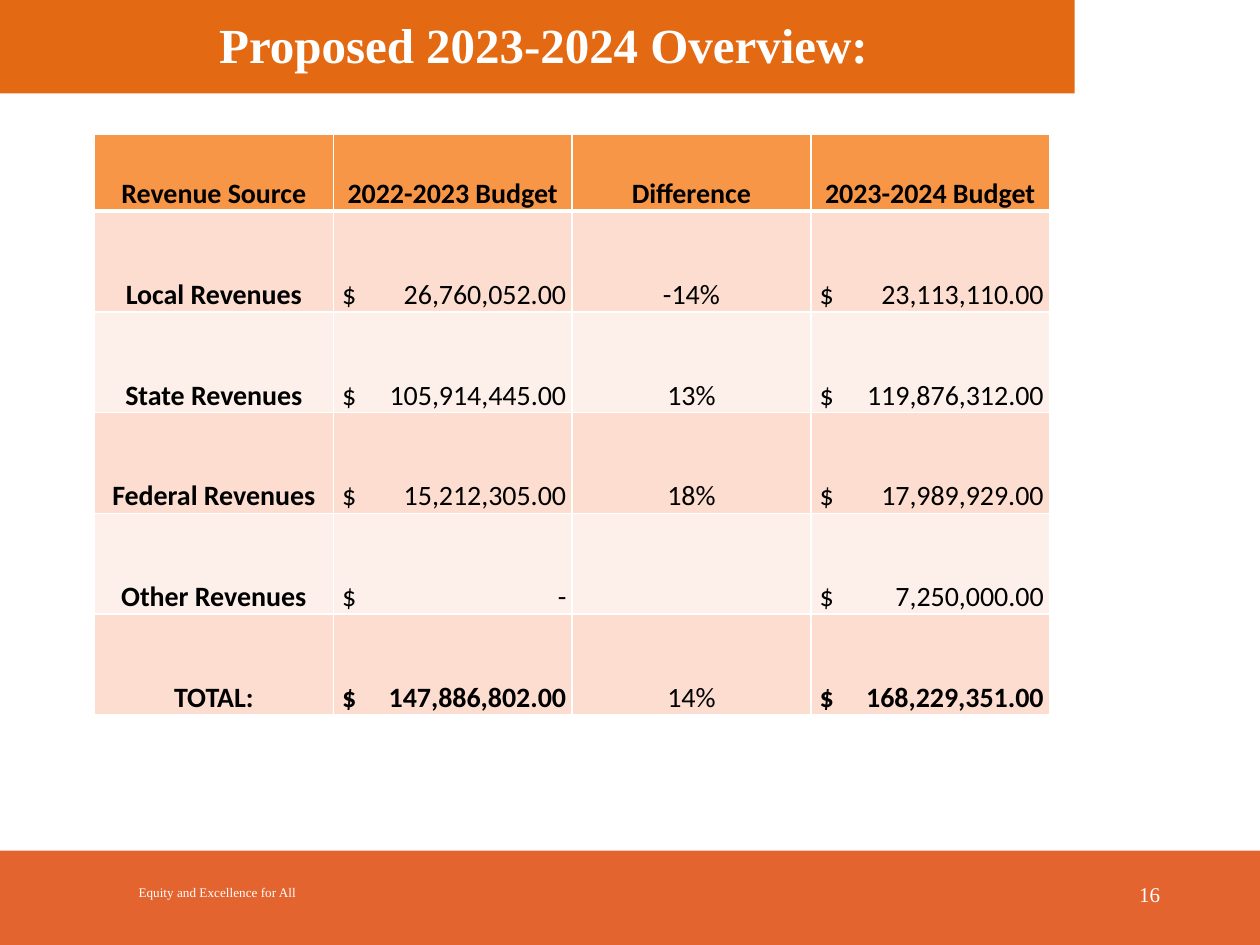
"""Build the revenue overview slide of the proposed budget."""
import dataclasses
import typing

import pptx
import pptx.dml.color
import pptx.enum.shapes
import pptx.enum.text
import pptx.oxml.ns
import pptx.util
from lxml import etree

WIDE, HIGH = 10, 7.5
HUES = {"head": "F79646", "odd": "FCDDCF", "even": "FDEFE9", "top": "E46913",
        "foot": "E4642F", "white": "FFFFFF", "black": "000000"}
SERIF, SANS = "Times New Roman", "Calibri"
COLS, PAD, STOP = 4, 0.07, 1.78


@dataclasses.dataclass
class Box:
    """A place on the slide, as shares of its width and height."""
    left: float
    top: float
    width: float
    height: float

    def place(self) -> tuple:
        """Return the place as lengths."""
        return tuple(pptx.util.Inches(share * side) for share, side in
                     zip((self.left, self.top, self.width, self.height), (WIDE, HIGH) * 2))


@dataclasses.dataclass
class Bar:
    """A coloured band."""
    box: Box
    hue: str


@dataclasses.dataclass
class Label:
    """A line of white text."""
    box: Box
    text: str
    size: float
    bold: bool = False
    inset: tuple = (0.01, 0)
    pitch: typing.Optional[float] = None


@dataclasses.dataclass
class Line:
    """A row of the revenue table."""
    name: str
    old: str
    change: str
    new: str
    total: bool = False


BARS = [Bar(Box(0, 0.9, 1, 0.1), "foot"), Bar(Box(0, 0, 0.853, 0.099), "top")]
LABELS = [
    Label(Box(0.173, 0.013, 0.583, 0.064), "Proposed 2023-2024 Overview:", 28, True, (0.01, 0.02)),
    Label(Box(0.9, 0.933, 0.025, 0.035), "16", 12, inset=(0.04, 0), pitch=14.1),
    Label(Box(0.109, 0.936, 0.14, 0.019), "Equity and Excellence for All", 7.5),
]
HEADS = ["Revenue Source", "2022-2023 Budget", "Difference", "2023-2024 Budget"]
LINES = [
    Line("Local Revenues", "26,760,052.00", "-14%", "23,113,110.00"),
    Line("State Revenues", "105,914,445.00", "13%", "119,876,312.00"),
    Line("Federal Revenues", "15,212,305.00", "18%", "17,989,929.00"),
    Line("Other Revenues", "-", "", "7,250,000.00"),
    Line("TOTAL:", "147,886,802.00", "14%", "168,229,351.00", True),
]
GRID = Box(0.075, 0.142, 0.758, 0.614)
HEAD, BODY = 0.61, 0.8


def shade(name: str) -> pptx.dml.color.RGBColor:
    """Look up a colour."""
    return pptx.dml.color.RGBColor.from_string(HUES[name])


def style(font, face: str, size: float, hue: str, bold: bool) -> None:
    """Set the look of a font."""
    font.name, font.size, font.bold = face, pptx.util.Pt(size), bold
    font.color.rgb = shade(hue)


def draw_bar(slide, bar: Bar) -> None:
    """Draw a band."""
    shape = slide.shapes.add_shape(pptx.enum.shapes.MSO_SHAPE.RECTANGLE, *bar.box.place())
    shape.shadow.inherit = False
    shape.fill.solid()
    shape.fill.fore_color.rgb = shade(bar.hue)
    shape.line.fill.background()


def draw_label(slide, label: Label) -> None:
    """Draw a line of text."""
    frame = slide.shapes.add_textbox(*label.box.place()).text_frame
    frame.word_wrap = True
    frame.margin_left, frame.margin_top = map(pptx.util.Inches, label.inset)
    frame.margin_right = frame.margin_bottom = 0
    para = frame.paragraphs[0]
    para.text = label.text
    if label.pitch:
        para.line_spacing = pptx.util.Pt(label.pitch)
    style(para.font, SERIF, label.size, "white", label.bold)


def add_node(root, tag: str, **attrs: str):
    """Add an XML child."""
    return etree.SubElement(root, pptx.oxml.ns.qn(tag), **attrs)


def edge(cell, low: float) -> None:
    """Give a cell white borders, ahead of its fill."""
    props = cell._tc.get_or_add_tcPr()
    for side, width in zip("LRTB", (1, 1, 1, low)):
        line = add_node(props, f"a:ln{side}", w=str(pptx.util.Pt(width)))
        add_node(add_node(line, "a:solidFill"), "a:srgbClr", val=HUES["white"])


def fill_cell(cell, text: str, hue: str, bold: bool, money: bool, low: float = 1) -> None:
    """Write and colour a cell."""
    edge(cell, low)
    cell.fill.solid()
    cell.fill.fore_color.rgb = shade(hue)
    cell.vertical_anchor = pptx.enum.text.MSO_ANCHOR.BOTTOM
    cell.margin_left = pptx.util.Inches(PAD if money else 0)
    cell.margin_right = cell.margin_top = cell.margin_bottom = 0
    para = cell.text_frame.paragraphs[0]
    align = pptx.enum.text.PP_ALIGN
    para.alignment = align.LEFT if money else align.CENTER
    if money:
        tabs = add_node(para._p.get_or_add_pPr(), "a:tabLst")
        add_node(tabs, "a:tab", pos=str(pptx.util.Inches(STOP)), algn="r")
    para.text = f"$\t{text}" if money else text
    style(para.font, SANS, 16, "black", bold)


def draw_table(slide) -> None:
    """Draw the revenue table."""
    table = slide.shapes.add_table(len(LINES) + 1, COLS, *GRID.place()).table
    for row in table.rows:
        row.height = pptx.util.Inches(BODY)
    table.rows[0].height = pptx.util.Inches(HEAD)
    for col, text in enumerate(HEADS):
        fill_cell(table.cell(0, col), text, "head", True, False, 3)
    for row, line in enumerate(LINES, 1):
        hue = "odd" if row % 2 else "even"
        for col, text in enumerate((line.name, line.old, line.change, line.new)):
            money = col % 2 == 1
            bold = col == 0 or (money and line.total)
            fill_cell(table.cell(row, col), text, hue, bold, money)


def main() -> None:
    """Build and save the slide."""
    deck = pptx.Presentation()
    deck.slide_width, deck.slide_height = pptx.util.Inches(WIDE), pptx.util.Inches(HIGH)
    slide = deck.slides.add_slide(deck.slide_layouts[6])
    for bar in BARS:
        draw_bar(slide, bar)
    for label in LABELS:
        draw_label(slide, label)
    draw_table(slide)
    deck.save("out.pptx")


if __name__ == "__main__":
    main()
